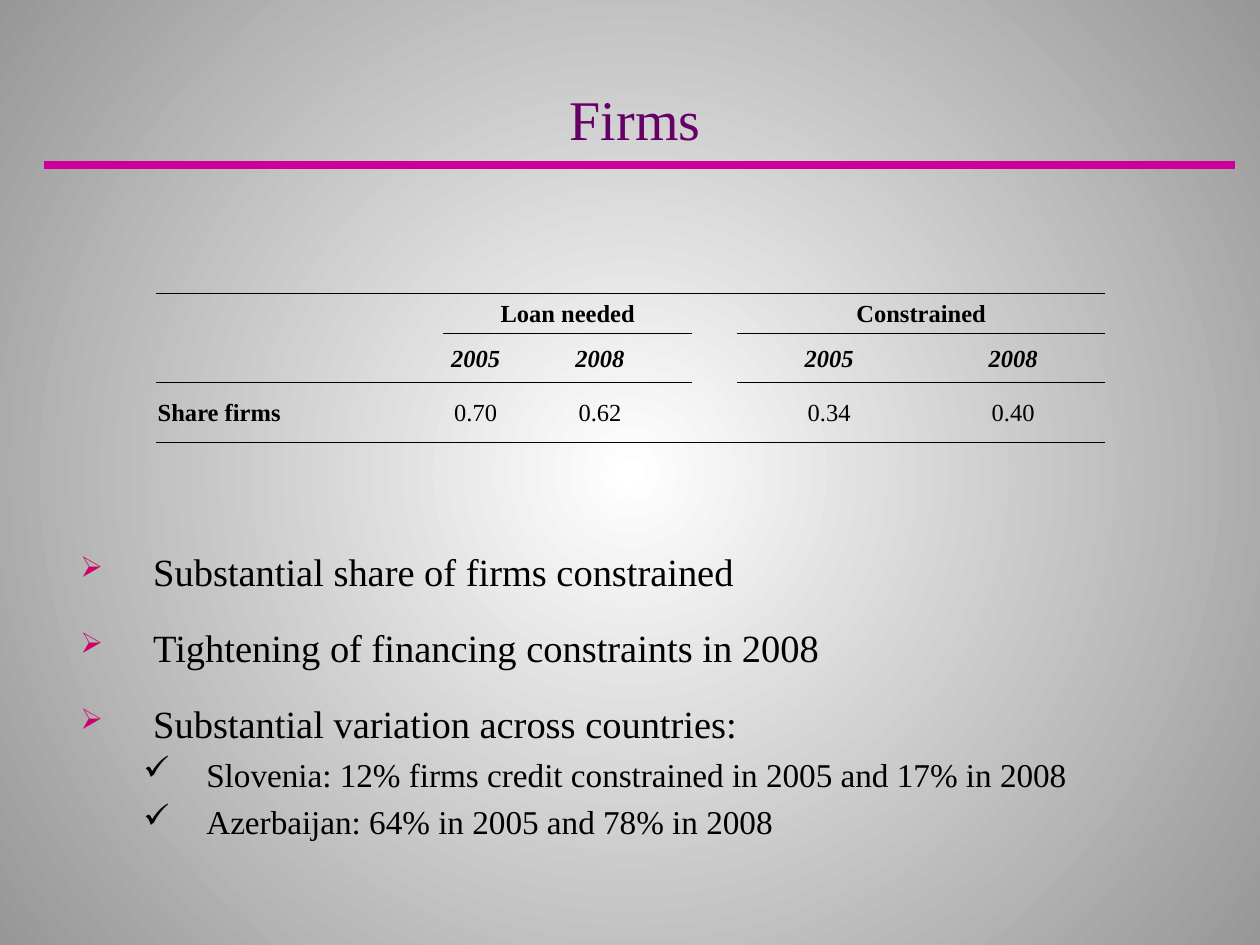
from lxml.etree import SubElement
from pptx import Presentation
from pptx.dml.color import RGBColor
from pptx.enum.shapes import MSO_CONNECTOR as Link
from pptx.enum.text import MSO_ANCHOR as Anchor, PP_ALIGN as Align
from pptx.oxml.ns import qn
from pptx.util import Cm, Pt

FONT = "Times New Roman"
BLACK = RGBColor(0x00, 0x00, 0x00)
WHITE = RGBColor(0xFF, 0xFF, 0xFF)
GREY = RGBColor(0x97, 0x97, 0x97)
PURPLE = RGBColor(0x66, 0x00, 0x66)
PINK = RGBColor(0xCC, 0x00, 0x99)
ROSE = RGBColor(0xCC, 0x00, 0x66)

COLS = (5.79, 1.3, 3.71, 0.91, 3.71, 3.71)
ROWS = (0.79, 0.99, 1.2)
GRID = (
    ("", "Loan needed", "", "", "Constrained", ""),
    ("", "2005", "2008", "", "2005", "2008"),
    ("Share firms", "0.70", "0.62", "", "0.34", "0.40"),
)
GAP = 3
# Line widths above the first row, then below each row
RULES = (
    (1, 1, 1, 1, 1, 1),
    (0, 0.5, 0.5, 0, 0.5, 0.5),
    (0.5, 0.5, 0.5, 0, 0.5, 0.5),
    (1, 1, 1, 1, 1, 1),
)
POINTS = (
    (1, "Substantial share of firms constrained", 12),
    (1, "Tightening of financing constraints in 2008", 12),
    (1, "Substantial variation across countries:", 0),
    (2, "Slovenia: 12% firms credit constrained in 2005 and 17% in 2008", 0),
    (2, "Azerbaijan: 64% in 2005 and 78% in 2008", 0),
)
# Level: mark, mark colour, mark percent, text size, margin, hanging indent
LEVELS = {
    1: ("➢", ROSE, 75, 22, 2.74, 1.47),
    2: ("✓", BLACK, 100, 19, 3.81, 1.27),
}


def add_run(para, text, size, color=BLACK, bold=False, italic=False):
    run = para.add_run()
    run.text = text
    font = run.font
    font.name, font.size = FONT, Pt(size)
    font.bold, font.italic = bold, italic
    font.color.rgb = color


def paint_back(slide):
    """Fill the slide with a round gradient, light in the middle."""
    fill = slide.background.fill
    fill.gradient()
    for stop, color in zip(fill.gradient_stops, (WHITE, GREY)):
        stop.color.rgb = color
    grad = slide.background._cSld.find(".//" + qn("a:gradFill"))
    grad.remove(grad.find(qn("a:lin")))
    ring = SubElement(grad, qn("a:path"), {"path": "circle"})
    SubElement(ring, qn("a:fillToRect"), {side: "50000" for side in "ltrb"})


def add_title(slide, left, top, width, height):
    title = slide.shapes.title
    title.left, title.top = Cm(left), Cm(top)
    title.width, title.height = Cm(width), Cm(height)
    frame = title.text_frame
    frame.vertical_anchor = Anchor.BOTTOM
    para = frame.paragraphs[0]
    para.alignment = Align.CENTER
    add_run(para, "Firms", 32, PURPLE)

    base = Cm(top + height + 0.15)
    rule = slide.shapes.add_connector(
        Link.STRAIGHT, Cm(left + 0.05), base, Cm(left + width + 0.12), base)
    rule.line.color.rgb = PINK
    rule.line.width = Pt(4.5)
    SubElement(rule._element.spPr, qn("a:effectLst"))


def set_edges(cell, above, below):
    props = cell._tc.get_or_add_tcPr()
    for side, width in zip("LRTB", (0, 0, above, below)):
        line = SubElement(props, qn("a:ln" + side), {"w": str(Pt(width))})
        if width:
            fill = SubElement(line, qn("a:solidFill"))
            SubElement(fill, qn("a:srgbClr"), {"val": str(BLACK)})
        else:
            SubElement(line, qn("a:noFill"))


def add_shares(slide, left, top):
    frame = slide.shapes.add_table(len(ROWS), len(COLS), Cm(left), Cm(top),
                                   Cm(sum(COLS)), Cm(sum(ROWS)))
    table = frame.table
    table.first_row = table.horz_banding = False
    for col, width in zip(table.columns, COLS):
        col.width = Cm(width)
    for row, height in zip(table.rows, ROWS):
        row.height = Cm(height)
    for start in (1, GAP + 1):
        table.cell(0, start).merge(table.cell(0, start + 1))
    for r, texts in enumerate(GRID):
        for c, text in enumerate(texts):
            cell = table.cell(r, c)
            set_edges(cell, RULES[r][c], RULES[r + 1][c])
            cell.fill.background()
            cell.vertical_anchor = Anchor.MIDDLE
            cell.margin_left = cell.margin_right = cell.margin_top = Cm(0.03)
            cell.margin_bottom = 0
            if text:
                para = cell.text_frame.paragraphs[0]
                para.alignment = Align.CENTER if c else Align.LEFT
                add_run(para, text, 14, bold=r < 2 or c == 0, italic=r == 1)


def set_bullet(para, mark, color, percent, margin, hang):
    props = para._p.get_or_add_pPr()
    props.set("marL", str(Cm(margin)))
    props.set("indent", str(-Cm(hang)))
    tint = SubElement(props, qn("a:buClr"))
    SubElement(tint, qn("a:srgbClr"), {"val": str(color)})
    SubElement(props, qn("a:buSzPct"), {"val": str(percent * 1000)})
    SubElement(props, qn("a:buChar"), {"char": mark})


def add_points(slide, left, top, width, height):
    box = slide.shapes.add_textbox(Cm(left), Cm(top), Cm(width), Cm(height))
    frame = box.text_frame
    frame.word_wrap = True
    for i, (level, text, after) in enumerate(POINTS):
        mark, color, percent, size, margin, hang = LEVELS[level]
        para = frame.add_paragraph() if i else frame.paragraphs[0]
        para.level = level - 1
        para.space_before = Pt(size * 0.23)
        para.space_after = Pt(after)
        set_bullet(para, mark, color, percent, margin, hang)
        add_run(para, text, size)


def main():
    deck = Presentation()
    deck.slide_width, deck.slide_height = Cm(25.4), Cm(19.05)
    slide = deck.slides.add_slide(deck.slide_layouts.get_by_name("Title Only"))
    paint_back(slide)
    add_title(slide, 0.84, 0.64, 23.93, 2.54)
    add_shares(slide, 3.15, 5.92)
    add_points(slide, 0.1, 10.92, 25.4, 6.81)
    deck.save("out.pptx")


if __name__ == "__main__":
    main()
